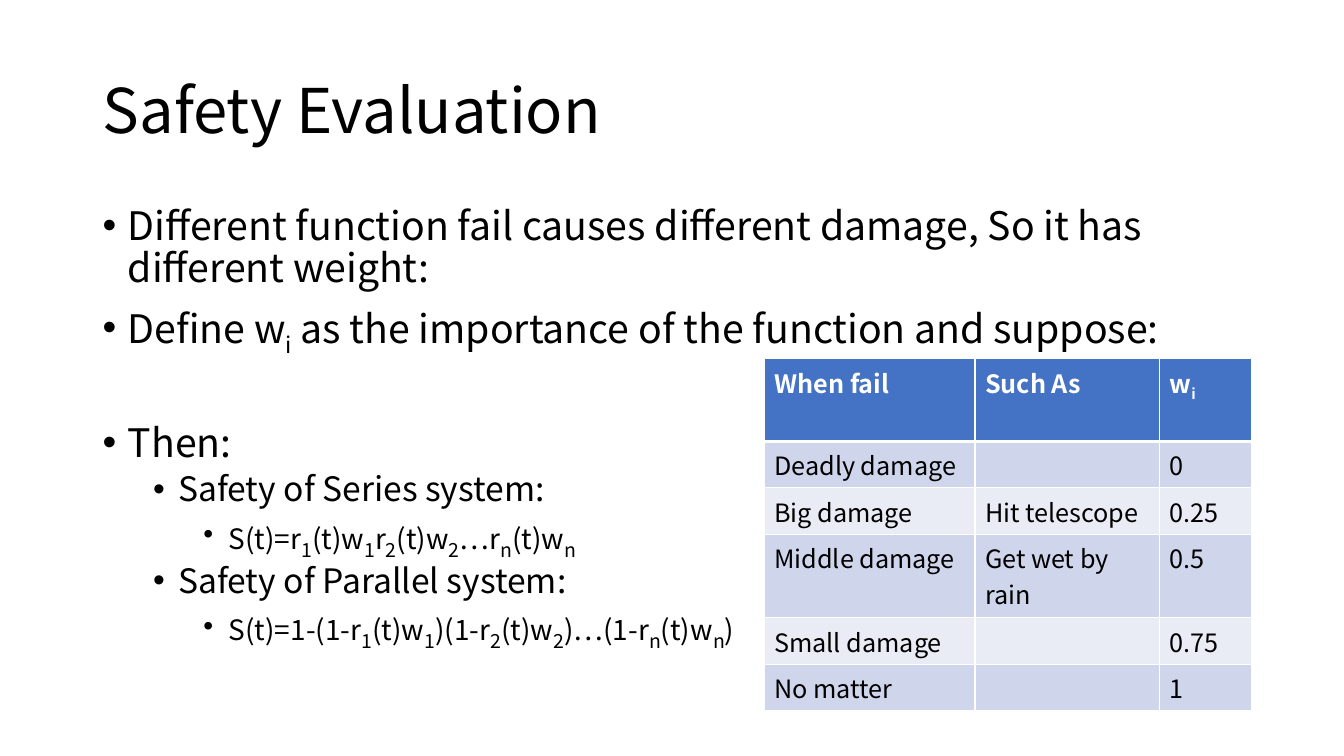
from lxml.etree import SubElement
from pptx import Presentation
from pptx.dml.color import RGBColor
from pptx.enum.text import MSO_ANCHOR
from pptx.oxml.ns import qn
from pptx.util import Inches, Pt

FONT = "Noto Sans CJK SC"


def add_text(paragraph, text, size, color="000000", bold=False, sub_size=None):
    """Write text where each _x marks the letter x as a subscript."""
    pieces = text.split("_")
    runs = [(pieces[0], False)]
    for piece in pieces[1:]:
        runs += [(piece[0], True), (piece[1:], False)]
    for content, is_subscript in runs:
        if not content:
            continue
        run = paragraph.add_run()
        run.text = content
        run_size = sub_size if is_subscript and sub_size else size
        values = {"name": FONT, "size": Pt(run_size), "bold": bold}
        for name, value in values.items():
            setattr(run.font, name, value)
        run.font.color.rgb = RGBColor.from_string(color)
        if is_subscript:
            run.font._element.set("baseline", "-25000")


def add_border(cell, side, width):
    line = SubElement(cell._tc.get_or_add_tcPr(), qn(f"a:{side}"), w=str(Pt(width)))
    fill = SubElement(line, qn("a:solidFill"))
    SubElement(fill, qn("a:srgbClr"), val="FFFFFF")


presentation = Presentation()
presentation.slide_width = Inches(13.33)
presentation.slide_height = Inches(7.5)
slide = presentation.slides.add_slide(presentation.slide_layouts[6])

# Title
title = slide.shapes.add_textbox(Inches(0.92), Inches(0.4), Inches(11.5), Inches(1.45))
title.text_frame.word_wrap = True
title.text_frame.vertical_anchor = MSO_ANCHOR.MIDDLE
title.text_frame.paragraphs[0].line_spacing = 0.9
add_text(title.text_frame.paragraphs[0], "Safety Evaluation", 44)

# Bullet list: level, space before, text
bullets = [
    (0, 0, "Different function fail causes different damage, So it has different weight:"),
    (0, 10, "Define w_i as the importance of the function and suppose:"),
    (0, 50, "Then:"),
    (1, 5, "Safety of Series system:"),
    (2, 5, "S(t)=r_1(t)w_1r_2(t)w_2…r_n(t)w_n"),
    (1, 5, "Safety of Parallel system:"),
    (2, 5, "S(t)=1-(1-r_1(t)w_1)(1-r_2(t)w_2)…(1-r_n(t)w_n)"),
]
level_sizes = [28, 24, 20]
body = slide.shapes.add_textbox(Inches(0.92), Inches(2), Inches(11.44), Inches(5.16))
body.text_frame.word_wrap = True
for index, (level, space_before, text) in enumerate(bullets):
    paragraph = body.text_frame.paragraphs[0] if index == 0 else body.text_frame.add_paragraph()
    values = {"level": level, "line_spacing": 0.9, "space_before": Pt(space_before)}
    for name, value in values.items():
        setattr(paragraph, name, value)
    properties = paragraph._p.get_or_add_pPr()
    properties.set("marL", str(Inches(0.25 + 0.5 * level)))
    properties.set("indent", str(Inches(-0.25)))
    SubElement(properties, qn("a:buFont"), typeface="Arial")
    SubElement(properties, qn("a:buChar"), char="•")
    add_text(paragraph, text, level_sizes[level], sub_size=24 if level == 2 else None)

# Weight table
rows = [
    ("When fail", "Such As", "w_i"),
    ("Deadly damage", "", "0"),
    ("Big damage", "Hit telescope", "0.25"),
    ("Middle damage", "Get wet by rain", "0.5"),
    ("Small damage", "", "0.75"),
    ("No matter", "", "1"),
]
column_widths = [2.09, 1.83, 0.91]
row_heights = [0.82, 0.46, 0.46, 0.83, 0.46, 0.46]
frame = slide.shapes.add_table(len(rows), len(column_widths), Inches(7.58), Inches(3.56),
                               Inches(sum(column_widths)), Inches(sum(row_heights)))
table = frame.table
for column, width in zip(table.columns, column_widths):
    column.width = Inches(width)
for row_index, (row, height) in enumerate(zip(rows, row_heights)):
    table.rows[row_index].height = Inches(height)
    is_header = row_index == 0
    fill_color = "4472C4" if is_header else ("E9EBF5", "CFD5EA")[row_index % 2]
    for column_index, text in enumerate(row):
        cell = table.cell(row_index, column_index)
        for side in ("lnL", "lnR", "lnT", "lnB"):
            heavy = (is_header and side == "lnB") or (row_index == 1 and side == "lnT")
            add_border(cell, side, 3 if heavy else 1)
        cell.fill.solid()
        cell.fill.fore_color.rgb = RGBColor.from_string(fill_color)
        paragraph = cell.text_frame.paragraphs[0]
        paragraph.font.size = Pt(18)
        add_text(paragraph, text, 18, "FFFFFF" if is_header else "000000", is_header)

presentation.save("out.pptx")
